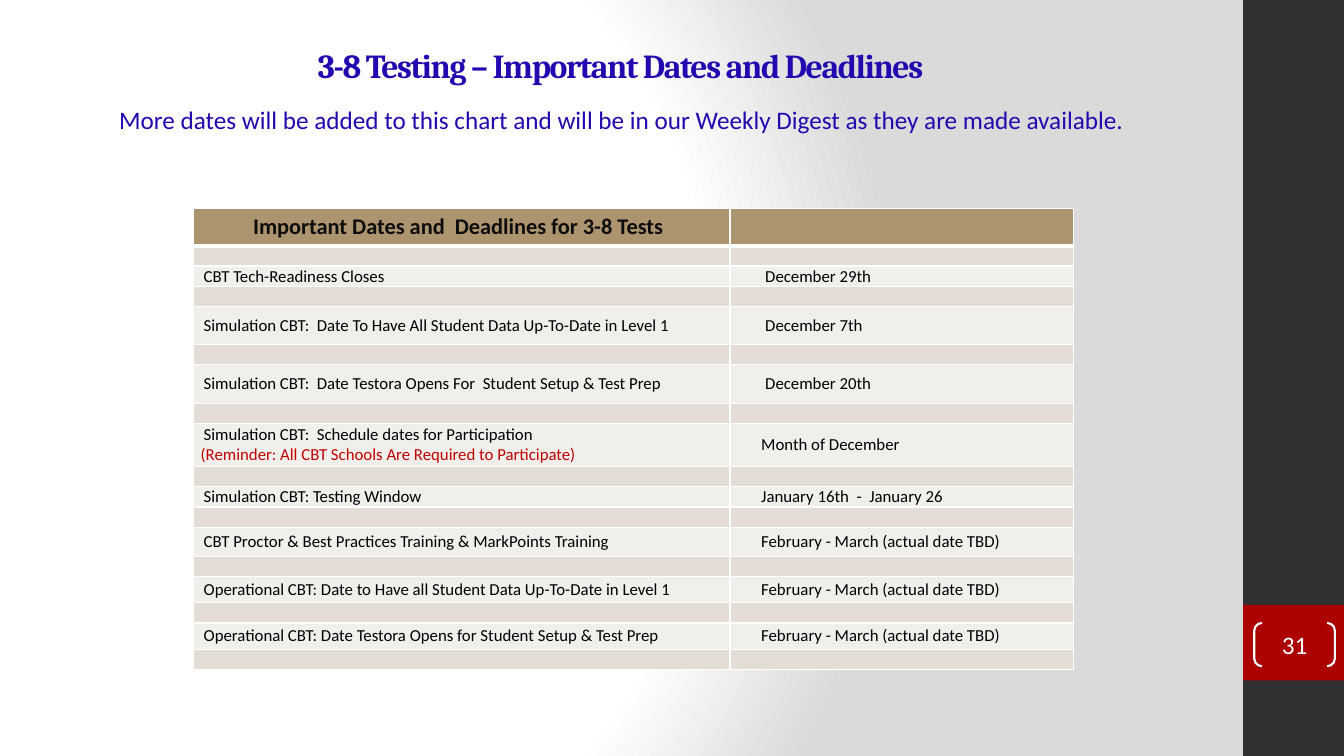
from lxml import etree
from pptx import Presentation
from pptx.dml.color import RGBColor
from pptx.enum.shapes import MSO_SHAPE
from pptx.enum.text import MSO_ANCHOR, MSO_AUTO_SIZE, PP_ALIGN
from pptx.oxml import parse_xml
from pptx.oxml.ns import nsdecls, qn
from pptx.util import Inches, Pt

BLUE = RGBColor(0x21, 0x09, 0xAF)
RED = RGBColor(0xAD, 0x01, 0x01)
REMINDER_RED = RGBColor(0xC0, 0x00, 0x00)
CHARCOAL = RGBColor(0x30, 0x30, 0x30)
WHITE = RGBColor(0xFF, 0xFF, 0xFF)
BLACK = RGBColor(0x00, 0x00, 0x00)
HEADER_TEXT = RGBColor(0x0D, 0x0D, 0x0D)
TAN = RGBColor(0xAC, 0x95, 0x6E)
BEIGE = RGBColor(0xE3, 0xDD, 0xD5)
CREAM = RGBColor(0xF1, 0xEF, 0xEB)

HEADER = "Important Dates and  Deadlines for 3-8 Tests"
REMINDER = "(Reminder: All CBT Schools Are Required to Participate)"
# Row height, task lines, date, date indent
DEADLINES = [
    (0.2, ["CBT Tech-Readiness Closes"], "December 29th", 0.35),
    (0.38, ["Simulation CBT:  Date To Have All Student Data Up-To-Date in Level 1"],
     "December 7th", 0.35),
    (0.38, ["Simulation CBT:  Date Testora Opens For  Student Setup & Test Prep"],
     "December 20th", 0.35),
    (0.43, ["Simulation CBT:  Schedule dates for Participation", REMINDER],
     "Month of December", 0.31),
    (0.2, ["Simulation CBT: Testing Window"], "January 16th  -  January 26", 0.31),
    (0.29, ["CBT Proctor & Best Practices Training & MarkPoints Training"],
     "February - March (actual date TBD)", 0.31),
    (0.26, ["Operational CBT: Date to Have all Student Data Up-To-Date in Level 1"],
     "February - March (actual date TBD)", 0.31),
    (0.26, ["Operational CBT: Date Testora Opens for Student Setup & Test Prep"],
     "February - March (actual date TBD)", 0.31),
]
SPACER_HEIGHT = 0.2


def format_paragraph(paragraph, text, size, color, font="Calibri", bold=False,
                     align=PP_ALIGN.LEFT):
    paragraph.text = text
    paragraph.alignment = align
    paragraph.font.size = Pt(size)
    paragraph.font.name = font
    paragraph.font.bold = bold
    paragraph.font.color.rgb = color


def paint_background(slide):
    stops = "".join(
        f'<a:gs pos="{position}"><a:srgbClr val="{color}"/></a:gs>'
        for position, color in ((0, "FFFFFF"), (75000, "FFFFFF"), (100000, "DADADA")))
    background = parse_xml(
        f'<p:bg {nsdecls("p", "a")}><p:bgPr><a:gradFill rotWithShape="1">'
        f'<a:gsLst>{stops}</a:gsLst><a:path path="circle">'
        '<a:fillToRect l="20000" t="50000" r="100000" b="50000"/></a:path>'
        '</a:gradFill><a:effectLst/></p:bgPr></p:bg>')
    slide.element.cSld.insert(0, background)


def add_block(slide, left, top, width, height, color):
    block = slide.shapes.add_shape(MSO_SHAPE.RECTANGLE, Inches(left), Inches(top),
                                   Inches(width), Inches(height))
    block.shadow.inherit = False
    block.fill.solid()
    block.fill.fore_color.rgb = color
    block.line.fill.background()


def add_sidebar(slide, left, top, width, height):
    add_block(slide, left, top, width, height, CHARCOAL)
    add_block(slide, left, top + 6, width, 0.75, RED)
    page_number = slide.shapes.add_shape(
        MSO_SHAPE.DOUBLE_BRACKET, Inches(left + 0.11), Inches(top + 6.18),
        Inches(0.8), Inches(0.43))
    page_number.adjustments[0] = 0.18
    page_number.shadow.inherit = False
    page_number.fill.background()
    page_number.line.color.rgb = WHITE
    page_number.line.width = Pt(1.5)
    frame = page_number.text_frame
    frame.margin_left = frame.margin_right = frame.margin_top = frame.margin_bottom = 0
    frame.vertical_anchor = MSO_ANCHOR.MIDDLE
    format_paragraph(frame.paragraphs[0], "31", 18, WHITE, align=PP_ALIGN.CENTER)


def add_heading(slide, left, top, width):
    title = slide.shapes.title
    title.left, title.top = Inches(left - 0.07), Inches(top)
    title.width, title.height = Inches(width + 0.12), Inches(0.69)
    title.text_frame.auto_size = MSO_AUTO_SIZE.NONE
    title.text_frame.vertical_anchor = MSO_ANCHOR.MIDDLE
    heading = title.text_frame.paragraphs[0]
    format_paragraph(heading, "3-8 Testing – Important Dates and Deadlines", 24, BLUE,
                     "Cambria", True, PP_ALIGN.CENTER)
    heading.runs[0]._r.get_or_add_rPr().set("spc", "-100")

    note = slide.shapes.add_textbox(Inches(left), Inches(top + 0.69),
                                    Inches(width), Inches(0.4))
    note.text_frame.word_wrap = True
    format_paragraph(
        note.text_frame.paragraphs[0],
        "More dates will be added to this chart and will be in our Weekly Digest "
        "as they are made available.", 18, BLUE, align=PP_ALIGN.CENTER)


def set_borders(cell, top, bottom):
    """Give the cell white borders, with top and bottom widths in points."""
    properties = cell._tc.get_or_add_tcPr()
    widths = (("lnL", 1), ("lnR", 1), ("lnT", top), ("lnB", bottom))
    for index, (side, width) in enumerate(widths):
        border = etree.Element(qn(f"a:{side}"), w=str(Pt(width)))
        fill = etree.SubElement(border, qn("a:solidFill"))
        etree.SubElement(fill, qn("a:srgbClr"), val=str(WHITE))
        properties.insert(index, border)


def fill_cell(cell, lines, background, size=12, color=BLACK, bold=False):
    """Write lines of (text, indent, color or None) into a cell."""
    cell.fill.solid()
    cell.fill.fore_color.rgb = background
    cell.margin_left = cell.margin_right = cell.margin_top = cell.margin_bottom = 0
    cell.vertical_anchor = MSO_ANCHOR.MIDDLE
    frame = cell.text_frame
    for index, (text, indent, line_color) in enumerate(lines):
        paragraph = frame.add_paragraph() if index else frame.paragraphs[0]
        format_paragraph(paragraph, text, size, line_color or color, bold=bold)
        paragraph._p.get_or_add_pPr().set("marL", str(Inches(indent)))
    if not lines:
        frame.paragraphs[0].font.size = Pt(11)
        frame.paragraphs[0]._p.get_or_add_endParaRPr().set("sz", "1100")


def add_deadline_table(slide, left, top, column_widths):
    rows = [(0.37, [(HEADER, 0.59, None)], [], TAN)]
    spacer = (SPACER_HEIGHT, [], [], BEIGE)
    rows.append(spacer)
    for height, tasks, date, date_indent in DEADLINES:
        task_lines = [(task, 0.07, REMINDER_RED) if task == REMINDER
                      else (task, 0.1, None) for task in tasks]
        rows += [(height, task_lines, [(date, date_indent, None)], CREAM), spacer]

    table = slide.shapes.add_table(
        len(rows), 2, Inches(left), Inches(top), Inches(sum(column_widths)),
        Inches(sum(row[0] for row in rows))).table
    table.first_row = table.horz_banding = False
    for column, width in zip(table.columns, column_widths):
        column.width = Inches(width)
    for index, (height, task_lines, date_lines, background) in enumerate(rows):
        table.rows[index].height = Inches(height)
        style = (16, HEADER_TEXT, True) if index == 0 else ()
        for column, lines in enumerate((task_lines, date_lines)):
            cell = table.cell(index, column)
            fill_cell(cell, lines, background, *style)
            set_borders(cell, 3 if index == 1 else 1, 3 if index == 0 else 1)


def main():
    presentation = Presentation()
    presentation.slide_width = Inches(13.33)
    presentation.slide_height = Inches(7.5)
    slide = presentation.slides.add_slide(presentation.slide_layouts[5])
    paint_background(slide)
    add_sidebar(slide, 12.33, 0, 1, 7.5)
    add_heading(slide, 0.67, 0.3, 10.99)
    add_deadline_table(slide, 1.92, 2.07, (5.32, 3.41))
    presentation.save("out.pptx")


if __name__ == "__main__":
    main()
